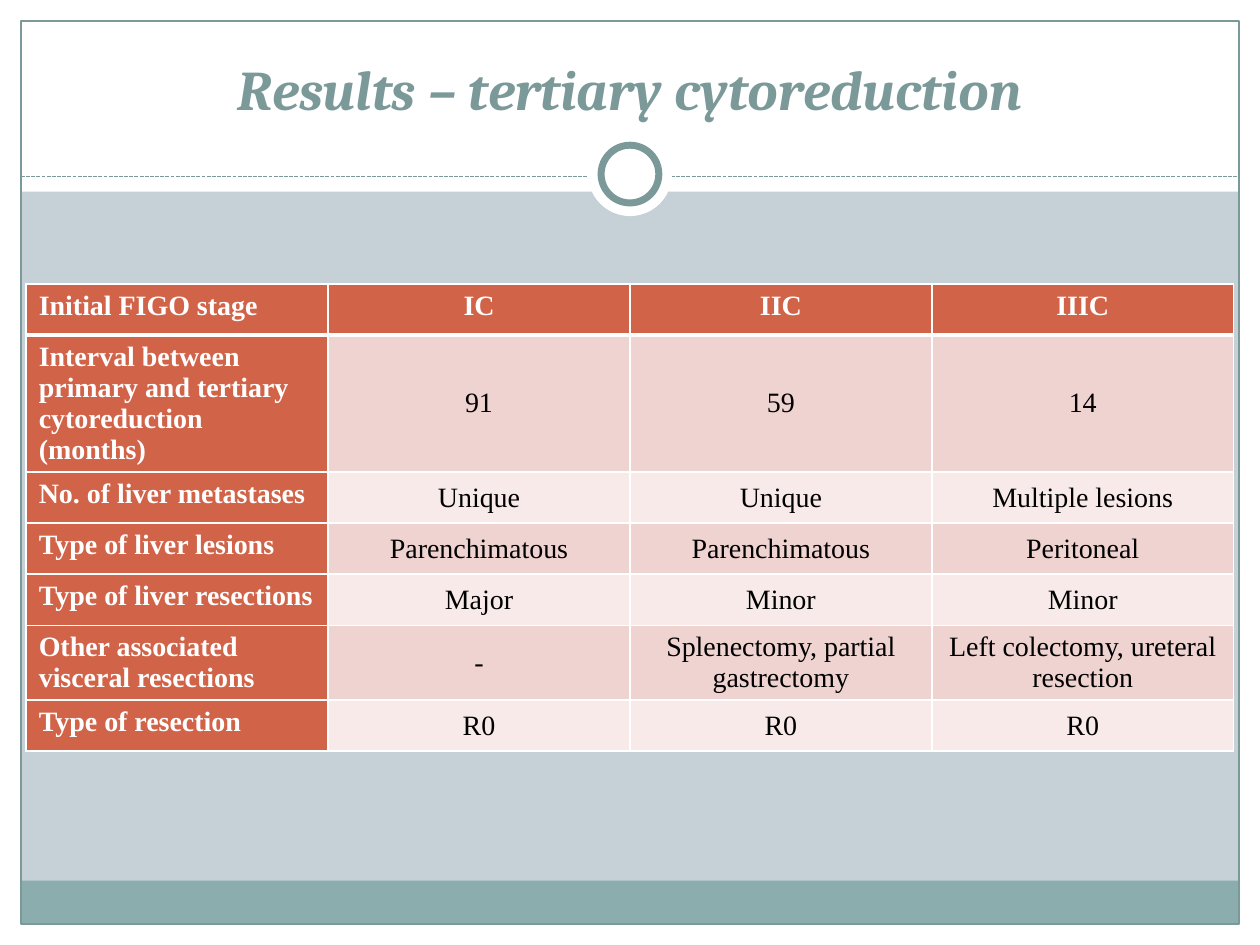
from lxml import etree
from pptx import Presentation
from pptx.dml.color import RGBColor
from pptx.enum.dml import MSO_LINE
from pptx.enum.shapes import MSO_CONNECTOR, MSO_SHAPE
from pptx.enum.text import MSO_ANCHOR, MSO_AUTO_SIZE, PP_ALIGN
from pptx.oxml.ns import qn
from pptx.util import Pt

RECTANGLE, OVAL = MSO_SHAPE.RECTANGLE, MSO_SHAPE.OVAL
STRAIGHT, DASHED = MSO_CONNECTOR.STRAIGHT, MSO_LINE.SQUARE_DOT
LEFT, CENTER = PP_ALIGN.LEFT, PP_ALIGN.CENTER
TOP, MIDDLE, BOTTOM = MSO_ANCHOR.TOP, MSO_ANCHOR.MIDDLE, MSO_ANCHOR.BOTTOM

WHITE = RGBColor(0xFF, 0xFF, 0xFF)
BLACK = RGBColor(0, 0, 0)
BACKGROUND = RGBColor(0xC5, 0xD1, 0xD7)
TEAL = RGBColor(0x7C, 0x99, 0x9A)
FOOTER = RGBColor(0x8C, 0xAD, 0xAE)
HEADER = RGBColor(0xD1, 0x63, 0x49)
BANDS = (RGBColor(0xEE, 0xD3, 0xD0), RGBColor(0xF7, 0xEA, 0xE9))

WIDTH, HEIGHT, MARGIN = 720, 540, 12
ROW_HEIGHT = 29.2

TITLE_FONT = {"name": "Cambria", "size": Pt(32), "bold": True, "italic": True}
HEADER_FONT = {"name": "Times New Roman", "size": Pt(16), "bold": True}
VALUE_FONT = {**HEADER_FONT, "bold": False}

RESULTS = [
    ("Initial FIGO stage", "IC", "IIC", "IIIC"),
    ("Interval between primary and tertiary cytoreduction (months)", "91", "59", "14"),
    ("No. of liver metastases", "Unique", "Unique", "Multiple lesions"),
    ("Type of liver lesions", "Parenchimatous", "Parenchimatous", "Peritoneal"),
    ("Type of liver resections", "Major", "Minor", "Minor"),
    ("Other associated visceral resections", "-",
     "Splenectomy, partial gastrectomy", "Left colectomy, ureteral resection"),
    ("Type of resection", "R0", "R0", "R0"),
]


def write_text(frame, text, font, color, align):
    para = frame.paragraphs[0]
    para.alignment = align
    span = para.add_run()
    span.text = text
    for name, value in font.items():
        setattr(span.font, name, value)
    span.font.color.rgb = color


def add_plain_shape(page, kind, box, fill=None, line=None, line_width=0.75):
    shape = page.shapes.add_shape(kind, *map(Pt, box))
    shape.shadow.inherit = False
    if fill is None:
        shape.fill.background()
    else:
        shape.fill.solid()
        shape.fill.fore_color.rgb = fill
    if line is None:
        shape.line.fill.background()
    else:
        shape.line.color.rgb = line
        shape.line.width = Pt(line_width)


def add_frame(page, box):
    left, top, width, height = box
    inner_width = width - 2 * MARGIN
    bottom = top + height - MARGIN
    divider = top + 101

    # White edges around the page, with the title band on top
    for edge in [
        (left, bottom, width, MARGIN),
        (left, top, width, 109.5),
        (left, top, MARGIN, height),
        (left + width - MARGIN, top, MARGIN, height),
    ]:
        add_plain_shape(page, RECTANGLE, edge, WHITE)

    # Footer bar and outline
    add_plain_shape(page, RECTANGLE, (left + MARGIN, bottom - 24.8, inner_width, 24.8), FOOTER)
    add_plain_shape(page, RECTANGLE,
                    (left + MARGIN, top + MARGIN, inner_width, height - 2 * MARGIN), line=TEAL)

    # Dashed divider
    rule = page.shapes.add_connector(
        STRAIGHT, Pt(left + MARGIN), Pt(divider), Pt(left + width - MARGIN), Pt(divider))
    rule.line.color.rgb = TEAL
    rule.line.width = Pt(0.75)
    rule.line.dash_style = DASHED
    etree.SubElement(rule.element.spPr, qn("a:effectLst"))

    # Ring centred on the divider
    for diameter, line in ((48, None), (33, TEAL)):
        ring_box = (left + (width - diameter) / 2, top + 99.5 - diameter / 2, diameter, diameter)
        add_plain_shape(page, OVAL, ring_box, WHITE, line, 4)


def add_title(page, box, text):
    title = page.shapes.title
    title.left, title.top, title.width, title.height = map(Pt, box)
    frame = title.text_frame
    frame.word_wrap = True
    frame.auto_size = MSO_AUTO_SIZE.NONE
    frame.vertical_anchor = BOTTOM
    write_text(frame, text, TITLE_FONT, TEAL, CENTER)
    # Bring the title in front of the white band
    title.element.getparent().append(title.element)


def set_borders(cell, widths):
    properties = cell._tc.get_or_add_tcPr()
    for side, width in widths.items():
        border = etree.SubElement(properties, qn(f"a:ln{side}"), w=str(Pt(width)))
        fill = etree.SubElement(border, qn("a:solidFill"))
        etree.SubElement(fill, qn("a:srgbClr"), val=str(WHITE))


def add_results_table(page, box, rows):
    table = page.shapes.add_table(len(rows), len(rows[0]), *map(Pt, box)).table
    for column in table.columns:
        column.width = Pt(box[2] / len(rows[0]))
    for row_index, row in enumerate(rows):
        table.rows[row_index].height = Pt(ROW_HEIGHT)
        for column_index, text in enumerate(row):
            cell = table.cell(row_index, column_index)
            is_header = row_index == 0 or column_index == 0
            set_borders(cell, {"L": 1, "R": 1, "T": 3 if row_index == 1 else 1,
                               "B": 3 if row_index == 0 else 1})
            cell.fill.solid()
            cell.fill.fore_color.rgb = HEADER if is_header else BANDS[(row_index - 1) % 2]
            cell.vertical_anchor = TOP if is_header else MIDDLE
            write_text(cell.text_frame, text,
                       HEADER_FONT if is_header else VALUE_FONT,
                       WHITE if is_header else BLACK,
                       LEFT if column_index == 0 else CENTER)


def main():
    deck = Presentation()
    deck.slide_width, deck.slide_height = Pt(WIDTH), Pt(HEIGHT)
    page = deck.slides.add_slide(deck.slide_layouts[5])
    page.background.fill.solid()
    page.background.fill.fore_color.rgb = BACKGROUND

    add_frame(page, (0, 0, WIDTH, HEIGHT))
    add_title(page, (24, 13, 672, 60), "Results – tertiary cytoreduction")
    add_results_table(page, (15, 162.2, 690, ROW_HEIGHT * len(RESULTS)), RESULTS)
    deck.save("out.pptx")


if __name__ == "__main__":
    main()
